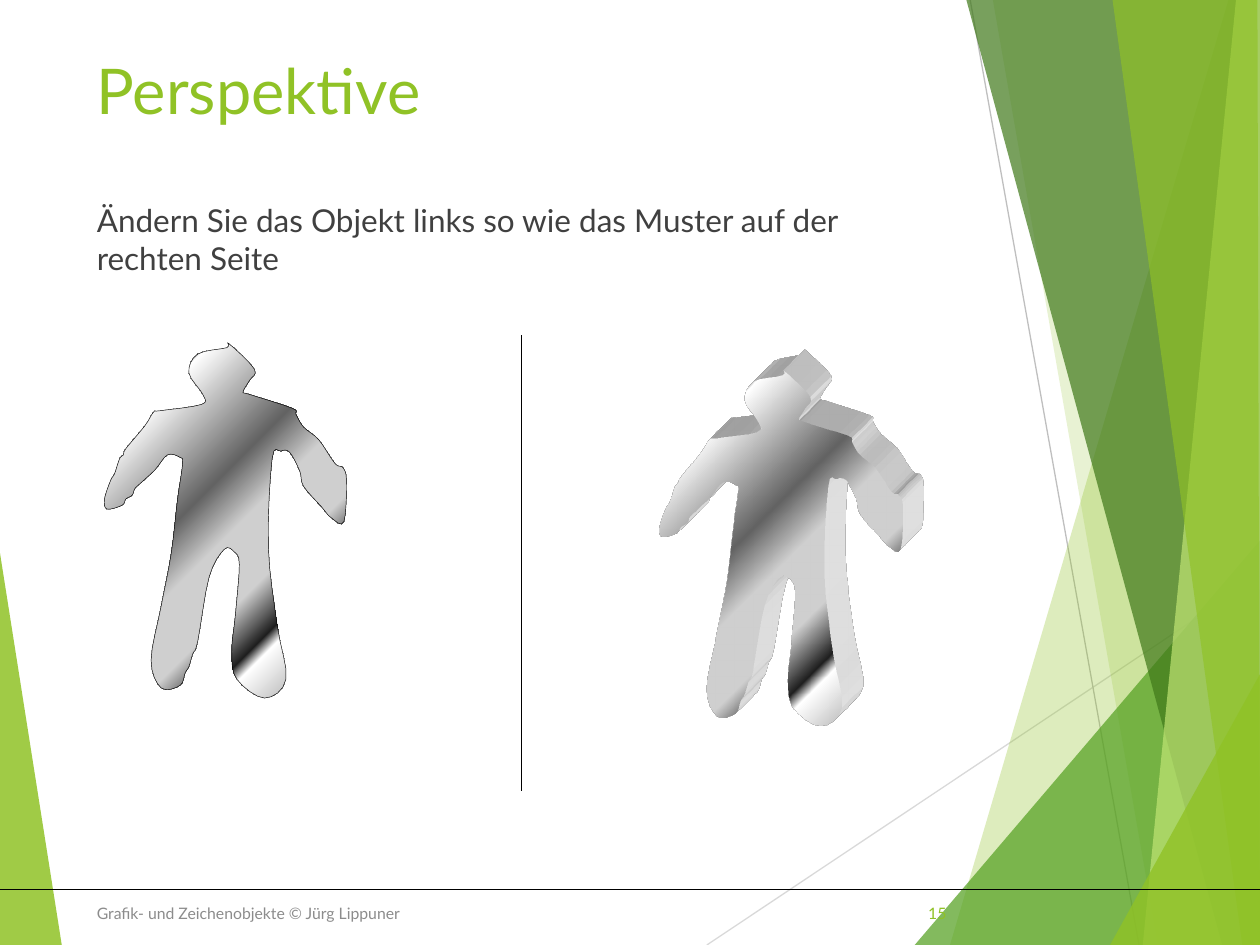
import pptx
import pptx.util
import pptx.dml.color
import pptx.enum.shapes
import pptx.enum.text
import pptx.oxml
import pptx.oxml.ns
import lxml.etree

RGBColor = pptx.dml.color.RGBColor
Align = pptx.enum.text.PP_ALIGN
Anchor = pptx.enum.text.MSO_ANCHOR

LIME = RGBColor(0x90, 0xC2, 0x26)
PALE_LIME = RGBColor(0xC0, 0xE4, 0x74)
LEAF = RGBColor(0x54, 0xA0, 0x21)
FOREST = RGBColor(0x3F, 0x78, 0x19)
LIGHT_GRAY = RGBColor(0xD9, 0xD9, 0xD9)
SILVER = RGBColor(0xBF, 0xBF, 0xBF)
DARK_GRAY = RGBColor(0x40, 0x40, 0x40)
MID_GRAY = RGBColor(0x8C, 0x8C, 0x8C)
BLACK = RGBColor(0, 0, 0)

CM_PER_UNIT = 2.54
WIDTH, HEIGHT = 10, 7.5
FONT = "Lato"

LEFT_FACET = ([(0, 4.39), (0.49, 7.5), (0, 7.5)], LIME, 85)
RAYS = [((5.61, 7.5), (10, 4.57), LIGHT_GRAY), ((7.7, 0), (9.04, 7.5), SILVER)]
RIGHT_FACETS = [
    ([(9.75, 0), (7.54, 7.5), (10, 7.5), (10, 0)], LIME, 30),
    ([(7.88, 0), (9.19, 7.5), (10, 7.5), (10, 0)], LIME, 20),
    ([(7.26, 7.5), (10, 4.29), (10, 7.5)], LEAF, 72),
    ([(7.67, 0), (9.7, 7.5), (10, 7.5), (10, 0)], FOREST, 70),
    ([(9.81, 0), (9.07, 7.5), (10, 7.5), (10, 0)], PALE_LIME, 70),
    ([(8.83, 0), (9.86, 7.5), (10, 7.5), (9.98, 0)], LIME, 65),
    ([(8.81, 7.5), (10, 5.35), (10, 7.5)], LIME, 80),
]
FOOTER_RULE = ((0, 7.06), (10, 7.06), BLACK)
DIVIDER = ((4.14, 2.66), (4.14, 6.28), BLACK)

TEXTS = [
    ("Perspektive", (0.67, 0.36, 6.94, 0.99), 36, LIME, Align.LEFT, Anchor.TOP),
    ("Ändern Sie das Objekt links so wie das Muster auf der rechten Seite",
     (0.67, 1.55, 6.94, 4.24), 18, DARK_GRAY, Align.LEFT, Anchor.TOP),
    ("Grafik- und Zeichenobjekte © Jürg Lippuner",
     (0.67, 7.05, 5.06, 0.4), 9, MID_GRAY, Align.LEFT, Anchor.MIDDLE),
    ("15", (7.05, 7.05, 0.56, 0.4), 9, LIME, Align.RIGHT, Anchor.MIDDLE),
]

PERSON = [
    (1.8, 2.76), (1.57, 2.81), (1.5, 2.96), (1.61, 3.13), (1.6, 3.21), (1.27, 3.26),
    (1.22, 3.27), (1.15, 3.38), (1, 3.56), (0.98, 3.61), (0.95, 3.64), (0.91, 3.76),
    (0.88, 3.81), (0.83, 3.96), (0.85, 4.04), (0.97, 4.01), (1, 3.96), (1.05, 3.93),
    (1.07, 3.88), (1.11, 3.84), (1.23, 3.73), (1.33, 3.61), (1.43, 3.63), (1.45, 3.68),
    (1.41, 3.96), (1.36, 4.39), (1.28, 4.81), (1.2, 5.24), (1.28, 5.46), (1.43, 5.44),
    (1.47, 5.34), (1.5, 5.29), (1.53, 5.19), (1.57, 5.09), (1.66, 4.58), (1.78, 4.36),
    (1.86, 4.38), (1.9, 4.48), (1.87, 4.87), (1.84, 5.17), (1.88, 5.39), (2.1, 5.54),
    (2.27, 5.39), (2.2, 4.96), (2.13, 4.34), (2.16, 3.64), (2.23, 3.58), (2.3, 3.59),
    (2.38, 3.74), (2.41, 3.86), (2.55, 4.02), (2.63, 4.11), (2.73, 4.14), (2.75, 3.81),
    (2.72, 3.71), (2.66, 3.68), (2.53, 3.49), (2.41, 3.39), (2.35, 3.29), (2.32, 3.24),
    (1.98, 3.13), (1.93, 3.11), (1.98, 3.02), (2.02, 2.93), (1.82, 2.73),
]
SAMPLE_OFFSET = (4.41, 0.22)
METAL = [(0, "FFFFFF"), (16, "1F1F1F"), (18, "FFFFFF"), (42, "636363"), (53, "CFCFCF"),
         (66, "CFCFCF"), (76, "1F1F1F"), (79, "FFFFFF"), (100, "7F7F7F")]
METAL_ANGLE = 45
CURVE_STEPS = 4
DEPTH = 430200


def length(value):
    return pptx.util.Cm(value * CM_PER_UNIT)


def element(xml):
    return pptx.oxml.parse_xml(xml.replace(">", f" {pptx.oxml.ns.nsdecls('a')}>", 1))


def set_values(target, values):
    for name, value in values.items():
        setattr(target, name, value)


def add_outline(slide, points):
    corners = [(length(x), length(y)) for x, y in points]
    builder = slide.shapes.build_freeform(*corners[0], scale=1.0)
    builder.add_line_segments(corners[1:], close=True)
    shape = builder.convert_to_shape()
    shape.shadow.inherit = False
    return shape


def add_facet(slide, points, color, opacity):
    shape = add_outline(slide, points)
    shape.fill.solid()
    shape.fill.fore_color.rgb = color
    shape.line.fill.background()
    color_node = shape._element.spPr.find(".//" + pptx.oxml.ns.qn("a:srgbClr"))
    color_node.append(element(f'<a:alpha val="{opacity * 1000}"></a:alpha>'))


def add_line(slide, start, end, color):
    line = slide.shapes.add_connector(
        pptx.enum.shapes.MSO_CONNECTOR.STRAIGHT, *map(length, start + end))
    line.line.color.rgb = color
    line.line.width = pptx.util.Pt(0.75)
    line._element.spPr.append(element("<a:effectLst></a:effectLst>"))


def add_text(slide, text, box, size, color, alignment, anchor):
    frame = slide.shapes.add_textbox(*map(length, box)).text_frame
    set_values(frame, {"word_wrap": True, "vertical_anchor": anchor})
    paragraph = frame.paragraphs[0]
    paragraph.alignment = alignment
    run = paragraph.add_run()
    run.text = text
    set_values(run.font, {"name": FONT, "size": pptx.util.Pt(size)})
    run.font.color.rgb = color


def smooth(points):
    curve = []
    count = len(points)
    for index in range(count):
        a, b, c, d = (points[(index + shift) % count] for shift in (-1, 0, 1, 2))
        for step in range(CURVE_STEPS):
            t = step / CURVE_STEPS
            curve.append(tuple(
                q + t * (r - p + t * (2 * p - 5 * q + 4 * r - s + t * (3 * (q - r) + s - p))) / 2
                for p, q, r, s in zip(a, b, c, d)))
    return curve


def add_person(slide, offset):
    shape = add_outline(slide, [(x + offset[0], y + offset[1]) for x, y in smooth(PERSON)])
    shape.line.color.rgb = BLACK
    shape.line.width = pptx.util.Pt(0.25)
    stops = "".join(f'<a:gs pos="{position * 1000}"><a:srgbClr val="{color}"/></a:gs>'
                    for position, color in METAL)
    properties = shape._element.spPr
    properties.find(pptx.oxml.ns.qn("a:custGeom")).addnext(element(
        f'<a:gradFill><a:gsLst>{stops}</a:gsLst>'
        f'<a:lin ang="{METAL_ANGLE * 60000}" scaled="0"/></a:gradFill>'))
    return shape


def extrude(shape):
    properties = shape._element.spPr
    properties.append(element(
        '<a:scene3d><a:camera prst="legacyObliqueTopRight"/>'
        '<a:lightRig rig="legacyFlat3" dir="b"/></a:scene3d>'))
    properties.append(element(
        f'<a:sp3d extrusionH="{DEPTH}" prstMaterial="legacyMatte">'
        '<a:extrusionClr><a:srgbClr val="FFFFFF"/></a:extrusionClr></a:sp3d>'))


def main():
    presentation = pptx.Presentation()
    set_values(presentation, {"slide_width": length(WIDTH), "slide_height": length(HEIGHT)})
    slide = presentation.slides.add_slide(presentation.slide_layouts[6])
    add_facet(slide, *LEFT_FACET)
    for ray in RAYS:
        add_line(slide, *ray)
    for facet in RIGHT_FACETS:
        add_facet(slide, *facet)
    add_line(slide, *FOOTER_RULE)
    for text in TEXTS:
        add_text(slide, *text)
    add_person(slide, (0, 0))
    extrude(add_person(slide, SAMPLE_OFFSET))
    add_line(slide, *DIVIDER)
    presentation.save("out.pptx")


if __name__ == "__main__":
    main()
